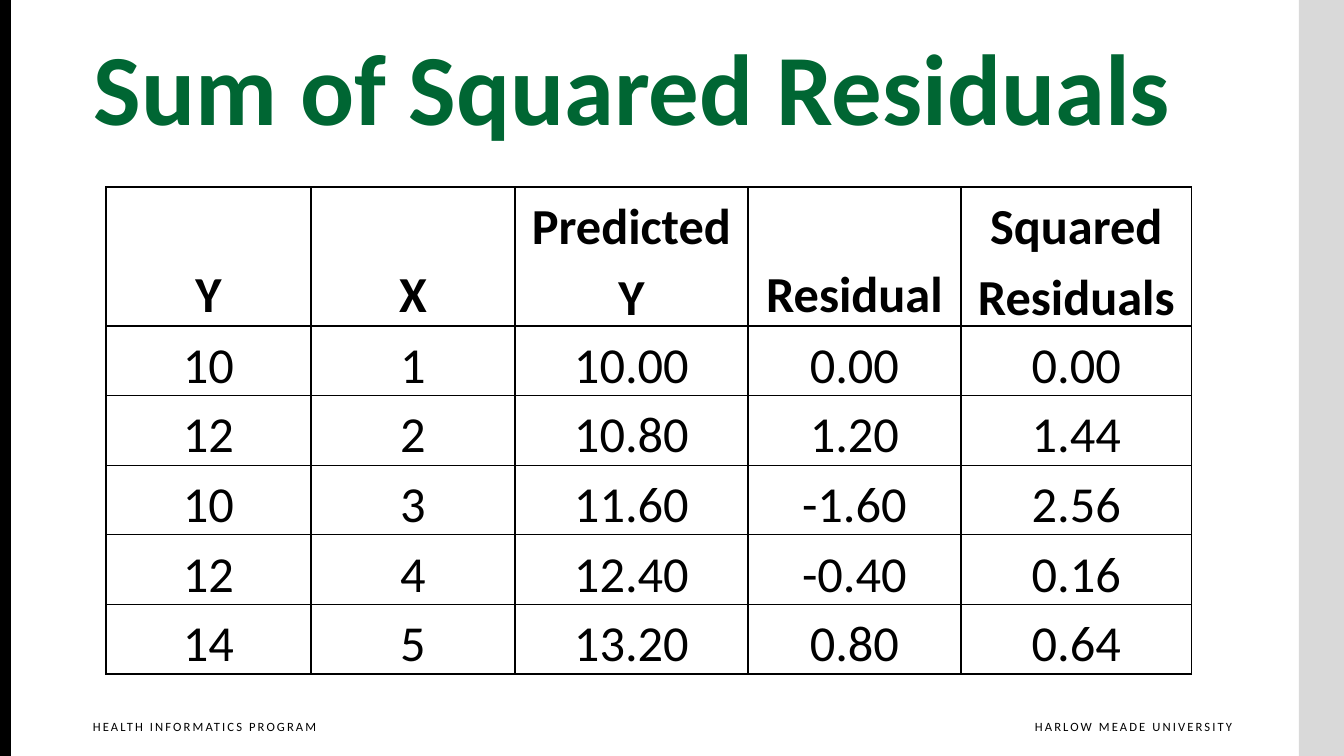
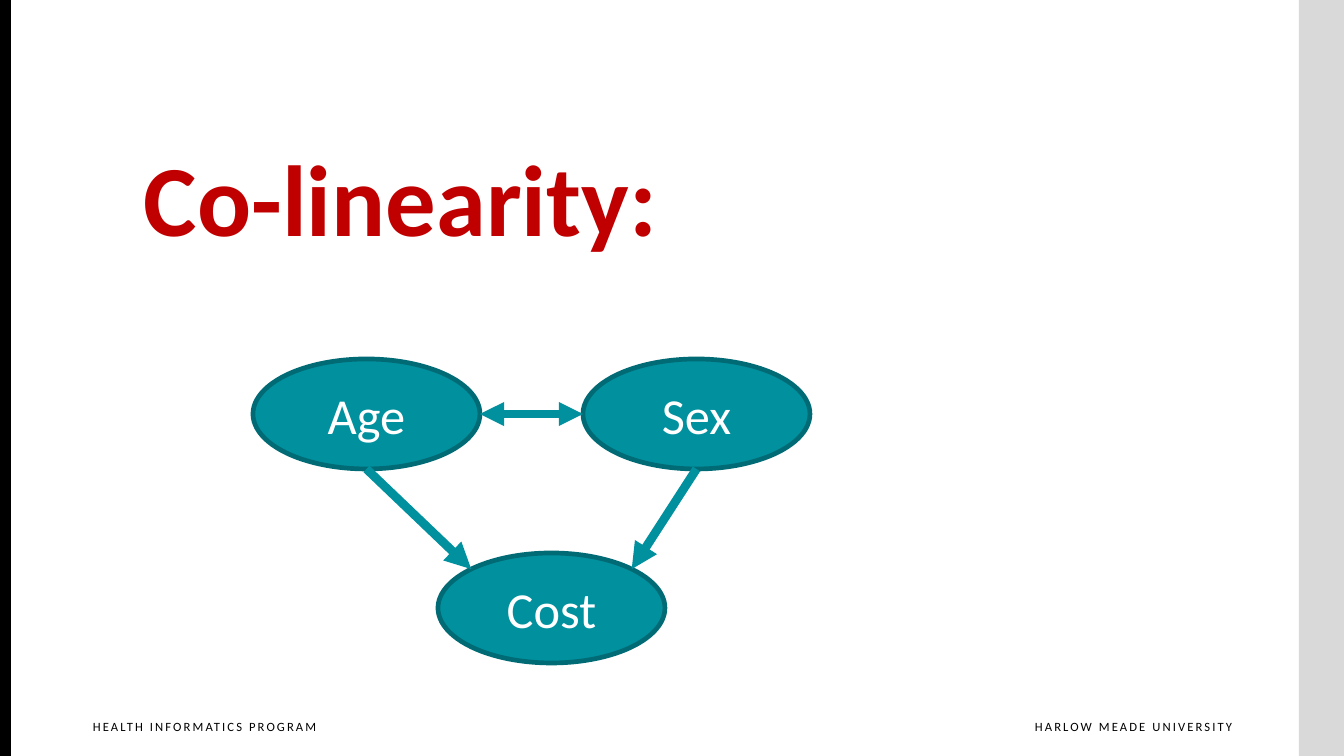
from math import sqrt

from lxml.etree import SubElement
from pptx import Presentation
from pptx.dml.color import RGBColor
from pptx.enum.shapes import MSO_CONNECTOR, MSO_SHAPE
from pptx.enum.text import MSO_ANCHOR as Anchor, PP_ALIGN as Align
from pptx.oxml.ns import qn
from pptx.util import Emu, Pt

FONT = "Calibri"
COLORS = {
    "black": "000000",
    "white": "FFFFFF",
    "gray": "D9D9D9",
    "green": "006633",
    "red": "C00000",
    "teal": "00909E",
    "dark teal": "006B75",
}

# All lengths are in px: (left, top, width, height)
SLIDE_SIZE = (1344, 756)
BANDS = [("gray", (1299, 0, 45, 756)), ("black", (0, 0, 11, 756))]
FOOTERS = [
    ("HARLOW MEADE UNIVERSITY", (995, 714, 237, 33), Align.RIGHT),
    ("HEALTH INFORMATICS PROGRAM", (83, 714, 256, 33), Align.LEFT),
]

RESIDUALS = [
    ("Y", "X", "Predicted Y", "Residual", "Squared Residuals"),
    ("10", "1", "10.00", "0.00", "0.00"),
    ("12", "2", "10.80", "1.20", "1.44"),
    ("10", "3", "11.60", "-1.60", "2.56"),
    ("12", "4", "12.40", "-0.40", "0.16"),
    ("14", "5", "13.20", "0.80", "0.64"),
]
TABLE_CORNER = (106, 187)
COLUMN_WIDTHS = (205, 204, 233, 213, 231)
ROW_HEIGHT = 69

NODE_SIZE = (227, 110)
NODES = {"Age": (253, 359), "Sex": (583, 359), "Cost": (438, 553)}
# (from node, side, to node, side, line width in points, arrow at both ends)
ARROWS = [
    ("Age", "bottom", "Cost", "top left", 6.25, False),
    ("Sex", "bottom", "Cost", "top right", 6.25, False),
    ("Age", "right", "Sex", "left", 5.75, True),
]
DIAGONAL = sqrt(0.5)
SIDES = {
    "bottom": (0, 1),
    "left": (-1, 0),
    "right": (1, 0),
    "top left": (-DIAGONAL, -DIAGONAL),
    "top right": (DIAGONAL, -DIAGONAL),
}


def px(length):
    return Emu(round(length * 914400 / 100.8))


def rgb(name):
    return RGBColor.from_string(COLORS[name])


def add_span(para, text, size, color, bold=False):
    span = para.add_run()
    span.text = text
    span.font.name = FONT
    span.font.size = Pt(size)
    span.font.bold = bold
    span.font.color.rgb = rgb(color)
    return span


def add_shape(slide, kind, place, fill):
    shape = slide.shapes.add_shape(kind, *map(px, place))
    shape.shadow.inherit = False
    shape.fill.solid()
    shape.fill.fore_color.rgb = rgb(fill)
    shape.line.fill.background()
    return shape


def add_text_box(slide, place):
    box = slide.shapes.add_textbox(*map(px, place))
    box.text_frame.word_wrap = True
    return box.text_frame


def add_page(deck, title, place, color):
    """Add a blank slide with the shared bands, footers and title style."""
    page = deck.slides.add_slide(deck.slide_layouts[6])
    for fill, band_place in BANDS:
        add_shape(page, MSO_SHAPE.RECTANGLE, band_place, fill)
    for text, footer_place, align in FOOTERS:
        frame = add_text_box(page, footer_place)
        frame.margin_right = 0
        para = frame.paragraphs[0]
        para.alignment = align
        span = add_span(para, text, 9, "black")
        span.font._element.set("spc", "150")
    add_span(add_text_box(page, place).paragraphs[0], title, 72, color, bold=True)
    return page


def add_borders(cell):
    properties = cell._tc.get_or_add_tcPr()
    for side in ("lnL", "lnR", "lnT", "lnB"):
        line = SubElement(properties, qn(f"a:{side}"), w=str(Pt(1)))
        fill = SubElement(line, qn("a:solidFill"))
        SubElement(fill, qn("a:srgbClr"), val=COLORS["black"])


def add_residual_table(page):
    heights = [2 * ROW_HEIGHT] + [ROW_HEIGHT] * (len(RESIDUALS) - 1)
    place = (*TABLE_CORNER, sum(COLUMN_WIDTHS), sum(heights))
    table = page.shapes.add_table(
        len(RESIDUALS), len(COLUMN_WIDTHS), *map(px, place)
    ).table
    table.horz_banding = False
    for column, width in zip(table.columns, COLUMN_WIDTHS):
        column.width = px(width)
    for row, height, values in zip(table.rows, heights, RESIDUALS):
        row.height = px(height)
        for cell, value in zip(row.cells, values):
            add_borders(cell)
            cell.fill.background()
            cell.vertical_anchor = Anchor.BOTTOM
            cell.margin_left = cell.margin_right = px(7)
            cell.margin_top = cell.margin_bottom = 0
            para = cell.text_frame.paragraphs[0]
            para.alignment = Align.CENTER
            para.line_spacing = 1.15
            add_span(para, value, 36, "black", bold=values is RESIDUALS[0])


def add_node(page, name, corner):
    node = add_shape(page, MSO_SHAPE.OVAL, (*corner, *NODE_SIZE), "teal")
    node.line.color.rgb = rgb("dark teal")
    node.line.width = Pt(3.35)
    node.text_frame.vertical_anchor = Anchor.MIDDLE
    para = node.text_frame.paragraphs[0]
    para.alignment = Align.CENTER
    add_span(para, name, 36, "white")


def edge_point(name, side):
    """Return the point on a node's outline at the given side."""
    return [
        px(start + size / 2 * (1 + direction))
        for start, size, direction in zip(NODES[name], NODE_SIZE, SIDES[side])
    ]


def add_arrow(page, source, source_side, target, target_side, width, both_ends):
    arrow = page.shapes.add_connector(
        MSO_CONNECTOR.STRAIGHT,
        *edge_point(source, source_side),
        *edge_point(target, target_side),
    )
    arrow.line.color.rgb = rgb("teal")
    arrow.line.width = Pt(width)
    line = arrow.line._get_or_add_ln()
    for end in ("headEnd", "tailEnd") if both_ends else ("tailEnd",):
        SubElement(line, qn(f"a:{end}"), type="triangle")
    SubElement(arrow._element.spPr, qn("a:effectLst"))


def main():
    deck = Presentation()
    deck.slide_width, deck.slide_height = map(px, SLIDE_SIZE)

    page = add_page(deck, "Sum of Squared Residuals", (84, 20, 1108, 132), "green")
    add_residual_table(page)

    page = add_page(deck, "Co-linearity:", (134, 131, 1042, 132), "red")
    for name, corner in NODES.items():
        add_node(page, name, corner)
    for arrow in ARROWS:
        add_arrow(page, *arrow)

    deck.save("out.pptx")


if __name__ == "__main__":
    main()
